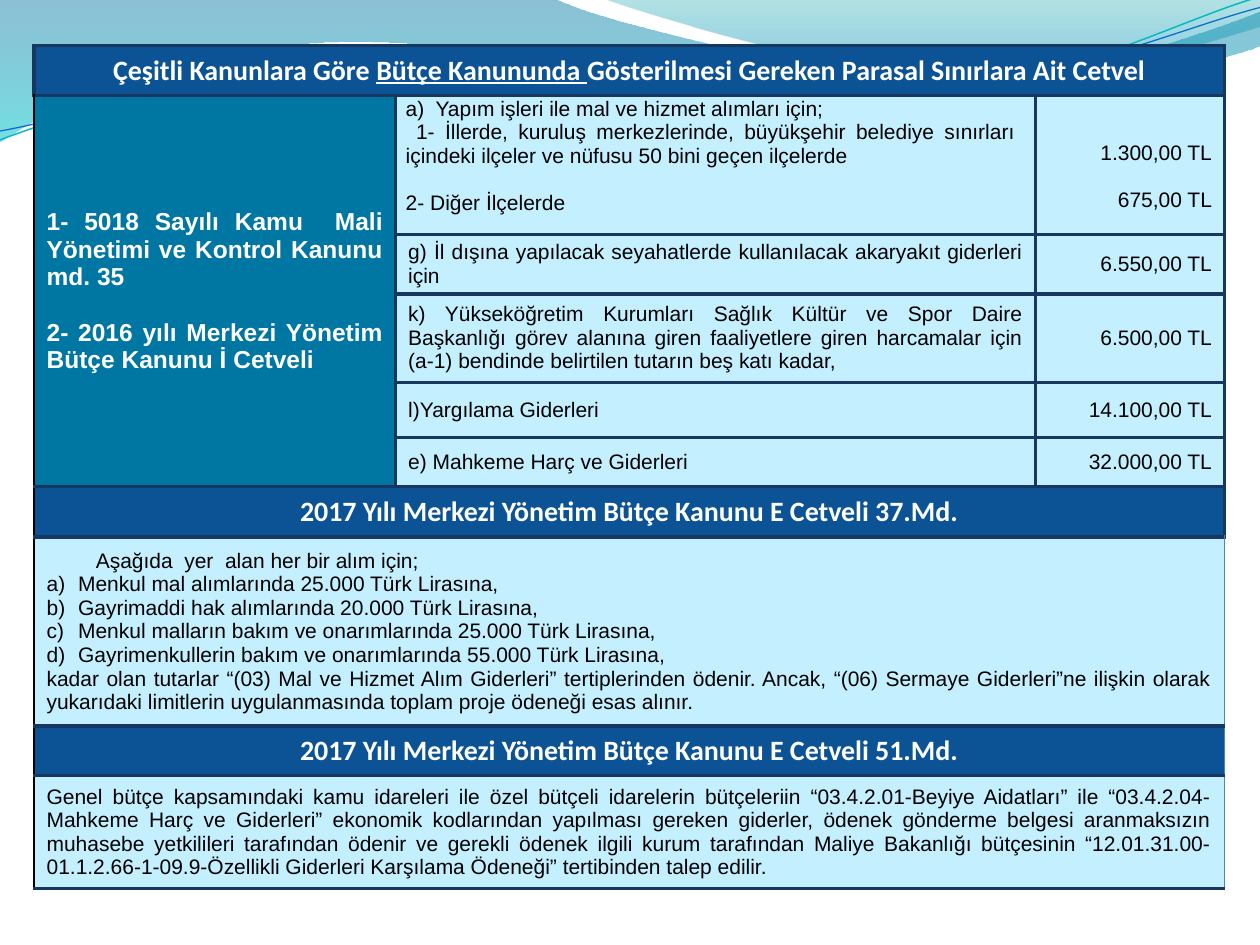
"""Build a slide with a table of monetary limits under a waved header."""
import math
from dataclasses import dataclass

import pptx
import pptx.dml.color
import pptx.enum.text
import pptx.oxml.ns
import pptx.util
from lxml import etree

Inches = pptx.util.Inches
Pt = pptx.util.Pt
RGBColor = pptx.dml.color.RGBColor
ALIGN = pptx.enum.text.PP_ALIGN
ANCHOR = pptx.enum.text.MSO_ANCHOR
qn = pptx.oxml.ns.qn

WHITE = RGBColor(0xFF, 0xFF, 0xFF)
BLACK = RGBColor(0x00, 0x00, 0x00)
NAVY = RGBColor(0x17, 0x37, 0x5E)
EDGE_BLUE = RGBColor(0x4F, 0x81, 0xBD)
HEADING_BLUE = RGBColor(0x0B, 0x53, 0x94)
LAW_BLUE = RGBColor(0x00, 0x76, 0xA3)
PALE_BLUE = RGBColor(0xC4, 0xEF, 0xFF)
DEEP_TEAL = RGBColor(0x00, 0x74, 0xA1)
BRIGHT_TEAL = RGBColor(0x00, 0xC6, 0xCF)
MID_TEAL = RGBColor(0x00, 0xA1, 0xA9)
SKY = RGBColor(0x00, 0x8B, 0xBF)
WAVE_TEAL = RGBColor(0x0A, 0xB8, 0xBF)
WAVE_BLUE = RGBColor(0x0F, 0x6F, 0xC6)

BANDS = [
    ([[(0, 0)], [(4.4, -0.01)],
      [(4.76, 0.17), (6.64, 0.63), (7.58, 0.63)],
      [(8.53, 0.63), (9.58, 0.26), (10, 0.09)], [(10.01, 0.36)],
      [(9.83, 0.44), (8.7, 0.76), (7.46, 0.75)],
      [(6.22, 0.75), (3.82, 0.28), (2.57, 0.34)],
      [(1.29, 0.36), (0.46, 0.83), (-0.01, 1.13)], [(0, 0)]],
     [(0, DEEP_TEAL, 45), (1, BRIGHT_TEAL, 55)]),
    ([[(4.79, -0.01)],
      [(5.09, 0.11), (6.82, 0.62), (7.69, 0.65)],
      [(8.56, 0.69), (9.61, 0.32), (10, 0.21)], [(10, 0)], [(4.79, -0.01)]],
     [(0, MID_TEAL, 30), (0.8, SKY, 45)]),
]
WAVES = [
    ([[(0, 1.11)],
      [(0.48, 0.93), (1.58, 0.57), (2.77, 0.52)],
      [(3.95, 0.47), (5.93, 0.89), (7.13, 0.8)],
      [(8.33, 0.71), (9.38, 0.15), (9.98, -0.02)]], (4.99, 0.58), WAVE_TEAL, 0.85),
    ([[(0, 1.04)],
      [(0.47, 0.96), (1.64, 0.61), (2.83, 0.56)],
      [(4.03, 0.51), (5.97, 0.84), (7.17, 0.75)],
      [(8.36, 0.67), (9.41, 0.21), (10, 0.06)]], (5, 0.59), WAVE_BLUE, 0.75),
]
WAVE_TILT = 2.7


@dataclass
class Line:
    text: str
    gap: float = 0
    left: float = 0
    indent: float = 0
    numbered: bool = False


@dataclass
class Style:
    fill: RGBColor
    font: str
    size: int
    color: RGBColor
    bold: bool


HEADING = Style(HEADING_BLUE, "Calibri", 16, WHITE, True)
LAW = Style(LAW_BLUE, "Arial", 14, WHITE, True)
BODY = Style(PALE_BLUE, "Arial", 12, BLACK, False)

UNDERLINED = "Bütçe Kanununda "
TITLE = f"Çeşitli Kanunlara Göre {UNDERLINED}Gösterilmesi Gereken Parasal Sınırlara Ait Cetvel"
LAWS = [Line("1- 5018 Sayılı Kamu  Mali Yönetimi ve Kontrol Kanunu md. 35"),
        Line("2- 2016 yılı Merkezi Yönetim Bütçe Kanunu İ Cetveli", gap=16)]
LIMITS = [
    ([Line("a)  Yapım işleri ile mal ve hizmet alımları için; "),
      Line(" 1- İllerde, kuruluş merkezlerinde, büyükşehir belediye sınırları içindeki "
           "ilçeler ve nüfusu 50 bini geçen ilçelerde"),
      Line("2- Diğer İlçelerde ", gap=13.5)], ALIGN.JUSTIFY,
     [Line("1.300,00 TL"), Line("675,00 TL", gap=13.5)]),
    ([Line("g) İl dışına yapılacak seyahatlerde kullanılacak akaryakıt giderleri için")],
     ALIGN.JUSTIFY, [Line("6.550,00 TL")]),
    ([Line("k) Yükseköğretim Kurumları Sağlık Kültür ve Spor Daire Başkanlığı görev alanına "
           "giren faaliyetlere giren harcamalar için (a-1) bendinde belirtilen tutarın beş "
           "katı kadar,")], ALIGN.JUSTIFY, [Line("6.500,00 TL")]),
    ([Line("l)Yargılama Giderleri")], ALIGN.LEFT, [Line("14.100,00 TL")]),
    ([Line("e) Mahkeme Harç ve Giderleri")], ALIGN.LEFT, [Line("32.000,00 TL")]),
]
PURCHASES = ["Menkul mal alımlarında 25.000 Türk Lirasına,",
             "Gayrimaddi hak alımlarında 20.000 Türk Lirasına, ",
             "Menkul malların bakım ve onarımlarında 25.000 Türk Lirasına,",
             "Gayrimenkullerin bakım ve onarımlarında 55.000 Türk Lirasına,"]
ARTICLES = [
    ("2017 Yılı Merkezi Yönetim Bütçe Kanunu E Cetveli 37.Md.",
     [Line("Aşağıda  yer  alan her bir alım için;", indent=0.39)]
     + [Line(text, left=0.25, indent=-0.25, numbered=True) for text in PURCHASES]
     + [Line("kadar olan tutarlar “(03) Mal ve Hizmet Alım Giderleri” tertiplerinden ödenir. "
             "Ancak, “(06) Sermaye Giderleri”ne ilişkin olarak yukarıdaki limitlerin "
             "uygulanmasında toplam proje ödeneği esas alınır.")]),
    ("2017 Yılı Merkezi Yönetim Bütçe Kanunu E Cetveli 51.Md.",
     [Line("Genel bütçe kapsamındaki kamu idareleri ile özel bütçeli idarelerin bütçeleriin "
           "“03.4.2.01-Beyiye Aidatları” ile “03.4.2.04-Mahkeme Harç ve Giderleri” ekonomik "
           "kodlarından yapılması gereken giderler, ödenek gönderme belgesi aranmaksızın "
           "muhasebe yetkilileri tarafından ödenir ve gerekli ödenek ilgili kurum tarafından "
           "Maliye Bakanlığı bütçesinin “12.01.31.00-01.1.2.66-1-09.9-Özellikli Giderleri "
           "Karşılama Ödeneği” tertibinden talep edilir.")]),
]
COLUMNS = [2.87, 5.08, 1.5]
ROWS = [0.4, 1.1, 0.39, 0.7, 0.44, 0.39, 0.4, 1.5, 0.39, 0.9]


def turn(point, center, degrees):
    x, y = point[0] - center[0], point[1] - center[1]
    sine, cosine = math.sin(math.radians(degrees)), math.cos(math.radians(degrees))
    return center[0] + x * cosine - y * sine, center[1] + x * sine + y * cosine


def add_outline(slide, segments, close):
    start, *rest = [(Inches(x), Inches(y)) for segment in segments for x, y in segment]
    builder = slide.shapes.build_freeform(*start)
    builder.add_line_segments(rest, close=close)
    shape = builder.convert_to_shape()
    shape.shadow.inherit = False
    lines = iter(list(shape.element.iter(qn("a:lnTo"))))
    for segment in segments[1:]:
        group = [next(lines) for _ in segment]
        if len(group) == 3:
            curve = etree.Element(qn("a:cubicBezTo"))
            group[0].addprevious(curve)
            for line in group:
                curve.append(line[0])
                line.getparent().remove(line)
    return shape


def add_header(slide):
    for segments, stops in BANDS:
        band = add_outline(slide, segments, True)
        band.line.fill.background()
        band.fill.gradient()
        band.fill.gradient_angle = 270
        for stop, (position, color, _) in zip(band.fill.gradient_stops, stops):
            stop.position = position
            stop.color.rgb = color
        for element, (_, _, alpha) in zip(band.element.iter(qn("a:srgbClr")), stops):
            etree.SubElement(element, qn("a:alpha"), val=str(alpha * 1000))
    for segments, center, color, width in WAVES:
        level = [[turn(point, center, WAVE_TILT) for point in segment] for segment in segments]
        wave = add_outline(slide, level, False)
        wave.rotation = 360 - WAVE_TILT
        wave.fill.background()
        wave.line.color.rgb = color
        wave.line.width = Pt(width)


def set_borders(cell, left, right):
    properties = cell._tc.get_or_add_tcPr()
    thick = (NAVY, 2.25)
    for side, (color, width) in zip("LRTB", (left, right, thick, thick)):
        line = etree.SubElement(properties, qn(f"a:ln{side}"), w=str(Pt(width)))
        fill = etree.SubElement(line, qn("a:solidFill"))
        etree.SubElement(fill, qn("a:srgbClr"), val=str(color))


def write(cell, lines, style, align):
    frame = cell.text_frame
    for index, line in enumerate(lines):
        paragraph = frame.paragraphs[0] if index == 0 else frame.add_paragraph()
        paragraph.alignment = align
        if line.gap:
            paragraph.space_before = Pt(line.gap)
        properties = paragraph._p.get_or_add_pPr()
        properties.set("marL", str(Inches(line.left)))
        properties.set("indent", str(Inches(line.indent)))
        if line.numbered:
            etree.SubElement(properties, qn("a:buAutoNum"), type="alphaLcParenR")
        for text in filter(None, line.text.partition(UNDERLINED)):
            run = paragraph.add_run()
            run.text = text
            font = run.font
            font.name, font.size, font.bold = style.font, Pt(style.size), style.bold
            font.underline = True if text == UNDERLINED else None
            font.color.rgb = style.color


def fill_block(table, row, column, lines, style, align, down=1, across=1):
    origin = table.cell(row, column)
    if down * across > 1:
        origin.merge(table.cell(row + down - 1, column + across - 1))
    left = (BLACK, 1) if column == 0 and row > 0 else (NAVY, 2.25)
    right = (EDGE_BLUE, 1) if row > len(LIMITS) + 1 else (NAVY, 2.25)
    for r in range(row, row + down):
        for c in range(column, column + across):
            cell = table.cell(r, c)
            set_borders(cell, left, right)
            cell.fill.solid()
            cell.fill.fore_color.rgb = style.fill
    origin.vertical_anchor = ANCHOR.MIDDLE
    write(origin, lines, style, align)
    return origin


def add_limits_table(slide):
    frame = slide.shapes.add_table(len(ROWS), len(COLUMNS), Inches(0.27), Inches(0.36),
                                   Inches(sum(COLUMNS)), Inches(sum(ROWS)))
    table = frame.table
    table.first_row = table.horz_banding = False
    for column, width in zip(table.columns, COLUMNS):
        column.width = Inches(width)
    for row, height in zip(table.rows, ROWS):
        row.height = Inches(height)
    fill_block(table, 0, 0, [Line(TITLE)], HEADING, ALIGN.CENTER, across=3)
    fill_block(table, 1, 0, LAWS, LAW, ALIGN.JUSTIFY, down=len(LIMITS))
    for row, (items, align, amounts) in enumerate(LIMITS, 1):
        item = fill_block(table, row, 1, items, BODY, align)
        amount = fill_block(table, row, 2, amounts, BODY, ALIGN.RIGHT)
        if row == 1:
            item.vertical_anchor = ANCHOR.TOP
            item.margin_left, item.margin_right = Inches(0.08), Inches(0.16)
            item.margin_top, item.margin_bottom = Inches(0.01), 0
            amount.margin_top = Inches(0.24)
    for index, (heading, lines) in enumerate(ARTICLES):
        row = 1 + len(LIMITS) + 2 * index
        fill_block(table, row, 0, [Line(heading)], HEADING, ALIGN.CENTER, across=3)
        fill_block(table, row + 1, 0, lines, BODY, ALIGN.JUSTIFY, across=3)


def main():
    presentation = pptx.Presentation()
    presentation.slide_width, presentation.slide_height = Inches(10), Inches(7.5)
    slide = presentation.slides.add_slide(presentation.slide_layouts[6])
    add_header(slide)
    add_limits_table(slide)
    presentation.save("out.pptx")


if __name__ == "__main__":
    main()
